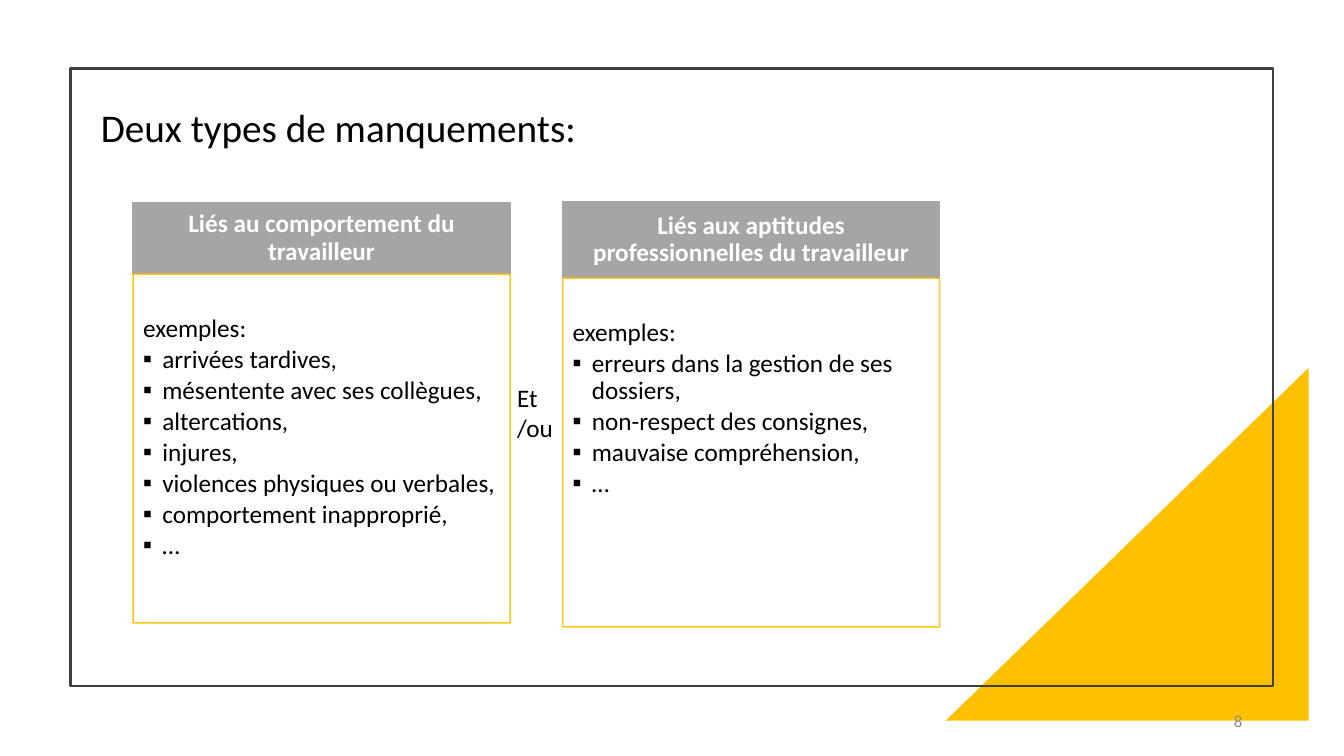
"""Build the slide on the two types of worker shortcomings."""
import pptx
import pptx.dml.color
import pptx.enum.shapes
import pptx.enum.text
import pptx.util
from lxml import etree
from pptx.oxml.ns import qn

Inches = pptx.util.Inches
Pt = pptx.util.Pt
RGBColor = pptx.dml.color.RGBColor
MSO_SHAPE = pptx.enum.shapes.MSO_SHAPE
ALIGN = pptx.enum.text.PP_ALIGN
ANCHOR = pptx.enum.text.MSO_ANCHOR

BLACK = RGBColor(0x00, 0x00, 0x00)
WHITE = RGBColor(0xFF, 0xFF, 0xFF)
GOLD = RGBColor(0xFF, 0xC0, 0x00)
GREY = RGBColor(0xA5, 0xA5, 0xA5)
FRAME_GREY = RGBColor(0x40, 0x40, 0x40)
NUMBER_GREY = RGBColor(0x8C, 0x8C, 0x8C)


def place(sp, box):
    for name, value in zip(("left", "top", "width", "height"), box):
        setattr(sp, name, Inches(value))


def write(sp, lines, font, para, frame, insets=(0.1, 0.05, 0.1, 0.05)):
    tf = sp.text_frame
    tf.text = "\n".join(lines)
    margins = dict(zip(("margin_left", "margin_top", "margin_right", "margin_bottom"), map(Inches, insets)))
    base = {"word_wrap": True, "auto_size": pptx.enum.text.MSO_AUTO_SIZE.NONE}
    for name, value in {**base, **margins, **frame}.items():
        setattr(tf, name, value)
    for p in tf.paragraphs:
        for name, value in {"alignment": ALIGN.LEFT, "space_before": Pt(0), **para}.items():
            setattr(p, name, value)
        for r in p.runs:
            for name, value in {"name": "Calibri", "size": Pt(18), "bold": False, **font}.items():
                if name != "color":
                    setattr(r.font, name, value)
            r.font.color.rgb = font["color"]


prs = pptx.Presentation()
prs.slide_width = Inches(13.33)
prs.slide_height = Inches(7.5)
s = prs.slides.add_slide(prs.slide_layouts.get_by_name("Comparison"))
holders = {sp.placeholder_format.idx: sp for sp in s.placeholders}

triangle = s.shapes.add_shape(
    MSO_SHAPE.RIGHT_TRIANGLE, Inches(9.38), Inches(3.65), Inches(3.6), Inches(3.5))
triangle.shadow.inherit = False
triangle.fill.solid()
triangle.fill.fore_color.rgb = GOLD
triangle.line.fill.background()
triangle._element.spPr.xfrm.set("flipH", "1")

border = s.shapes.add_shape(
    MSO_SHAPE.RECTANGLE, Inches(0.7), Inches(0.68), Inches(11.93), Inches(6.13))
border.shadow.inherit = False
border.fill.background()
border.line.color.rgb = FRAME_GREY
border.line.width = Pt(1.5)

title = holders[0]
place(title, (0.9, 0.97, 5.06, 0.57))
write(title, ["Deux types de manquements:"], {"color": BLACK, "size": Pt(28)}, {},
      {"vertical_anchor": ANCHOR.TOP, "word_wrap": False})

columns = [
    (1, 1.32, 2.01, 0.71, "Liés au comportement du travailleur",
     ["arrivées tardives,", "mésentente avec ses collègues,", "altercations,", "injures,",
      "violences physiques ou verbales,", "comportement inapproprié,", "…"]),
    (3, 5.58, 2, 0.76, "Liés aux aptitudes professionnelles du travailleur",
     ["erreurs dans la gestion de ses dossiers,", "non-respect des consignes,",
      "mauvaise compréhension,", "…"]),
]
for idx, left, top, height, heading, examples in columns:
    header, body = holders[idx], holders[idx + 1]
    place(header, (left, top, 3.74, height))
    place(body, (left, top + height, 3.74, 3.46))
    for sp, fill, line in ((header, GREY, GREY), (body, WHITE, GOLD)):
        sp.fill.solid()
        sp.fill.fore_color.rgb = fill
        sp.line.color.rgb = line
        sp.line.width = Pt(1)
    for color in body._element.spPr.iter(qn("a:srgbClr")):
        etree.SubElement(color, qn("a:alpha"), val="90000")

    write(header, [heading], {"color": WHITE, "bold": True},
          {"alignment": ALIGN.CENTER, "line_spacing": 0.9},
          {"vertical_anchor": ANCHOR.MIDDLE}, (0.14, 0.08, 0.14, 0.08))
    write(body, ["exemples:"] + examples, {"color": BLACK},
          {"line_spacing": 0.9, "space_after": Pt(2.7)},
          {"vertical_anchor": ANCHOR.TOP}, (0.1, 0.41, 0.14, 0.16))
    for i, p in enumerate(body.text_frame.paragraphs):
        pPr = p._p.get_or_add_pPr()
        pPr.set("marL", str(Inches(0.19)))
        pPr.set("indent", str(Inches(-0.19)))
        if i == 0:
            etree.SubElement(pPr, qn("a:buNone"))
        else:
            etree.SubElement(pPr, qn("a:buFont"), typeface="Calibri")
            etree.SubElement(pPr, qn("a:buChar"), char="▪")

link = s.shapes.add_textbox(Inches(5.03), Inches(3.74), Inches(0.58), Inches(0.71))
write(link, ["Et", "/ou"], {"color": BLACK}, {}, {})

number = s.shapes.add_textbox(Inches(9.42), Inches(6.95), Inches(3), Inches(0.4))
write(number, ["8"], {"color": NUMBER_GREY, "size": Pt(12)},
      {"alignment": ALIGN.RIGHT}, {"vertical_anchor": ANCHOR.MIDDLE})

prs.save("out.pptx")
